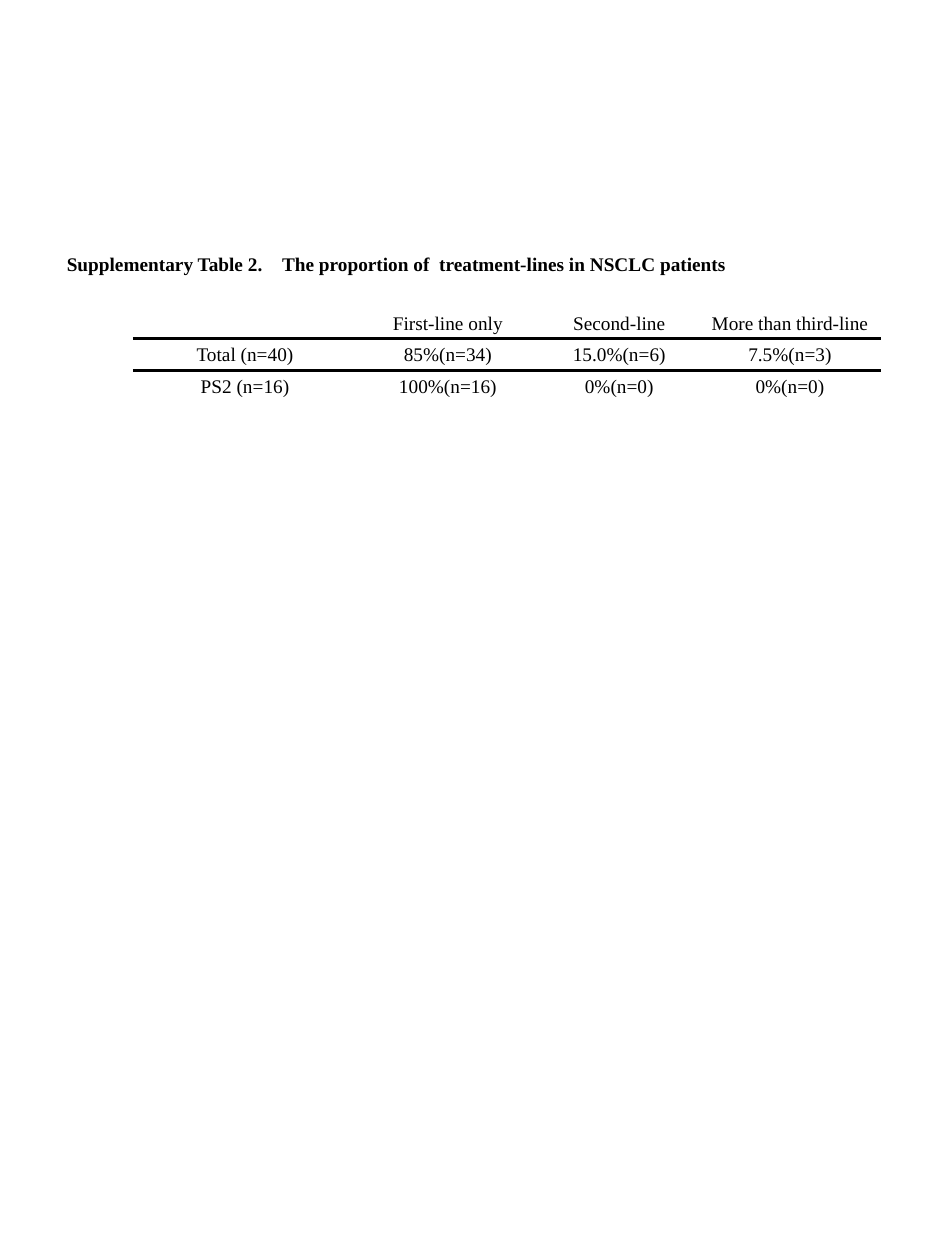
from lxml.etree import SubElement
from pptx import Presentation
from pptx.dml.color import RGBColor as Rgb
from pptx.enum.text import MSO_ANCHOR as Anchor, PP_ALIGN as Align
from pptx.oxml.ns import qn
from pptx.util import Inches, Pt

COLORS = {"ink": "000000"}
FONT = "Times New Roman"
TEXT_SIZE = 11
RULE_WIDTH = 2
HEADER_ROW = 2

column_widths = [0.54, 1.77, 1.45, 1.27, 1.44]
row_heights = [0.25, 0.23, 0.25, 0.25, 0.25]
title = "Supplementary Table 2.　The proportion of  treatment-lines in NSCLC patients"
treatment_lines = [
    [title, "", "", "", ""],
    ["", "", "", "", ""],
    ["", "", "First-line only", "Second-line", "More than third-line"],
    ["", "Total (n=40)", "85%(n=34)", "15.0%(n=6)", "7.5%(n=3)"],
    ["", "PS2 (n=16)", "100%(n=16)", "0%(n=0)", "0%(n=0)"],
]


def write(cell, text, size=TEXT_SIZE, bold=False, align=Align.CENTER):
    cell.margin_left = cell.margin_right = cell.margin_top = Inches(0.01)
    cell.margin_bottom = 0
    cell.vertical_anchor = Anchor.MIDDLE
    paragraph = cell.text_frame.paragraphs[0]
    paragraph.alignment = align
    if text:
        run = paragraph.add_run()
        run.text = text
        run.font.name = FONT
        run.font.size = Pt(size)
        run.font.bold = bold
        run.font.color.rgb = Rgb.from_string(COLORS["ink"])
    else:
        SubElement(paragraph._p, qn("a:endParaRPr"), sz=str(size * 100))


def rule(cell, side):
    properties = cell._tc.get_or_add_tcPr()
    line = SubElement(properties, qn(f"a:ln{side}"), w=str(Pt(RULE_WIDTH)))
    fill = SubElement(line, qn("a:solidFill"))
    SubElement(fill, qn("a:srgbClr"), val=COLORS["ink"])
    properties.insert(0, line)


prs = Presentation()
prs.slide_width, prs.slide_height = Inches(7.5), Inches(10)
slide = prs.slides.add_slide(prs.slide_layouts[6])

table = slide.shapes.add_table(
    len(row_heights), len(column_widths),
    Inches(0.52), Inches(1.96),
    Inches(sum(column_widths)), Inches(sum(row_heights)),
).table
table.first_row = table.horz_banding = False
for column, width in zip(table.columns, column_widths):
    column.width = Inches(width)
for row, height in zip(table.rows, row_heights):
    row.height = Inches(height)

for r, entries in enumerate(treatment_lines):
    for c, entry in enumerate(entries):
        cell = table.cell(r, c)
        heading = r == 0
        write(cell, entry, bold=heading, align=Align.LEFT if heading else Align.CENTER)
        cell.fill.background()
        if c > 0 and r == HEADER_ROW:
            rule(cell, "B")
        if c > 0 and r == HEADER_ROW + 1:
            rule(cell, "T")

table.cell(0, 0).merge(table.cell(0, len(column_widths) - 1))

prs.save("out.pptx")
